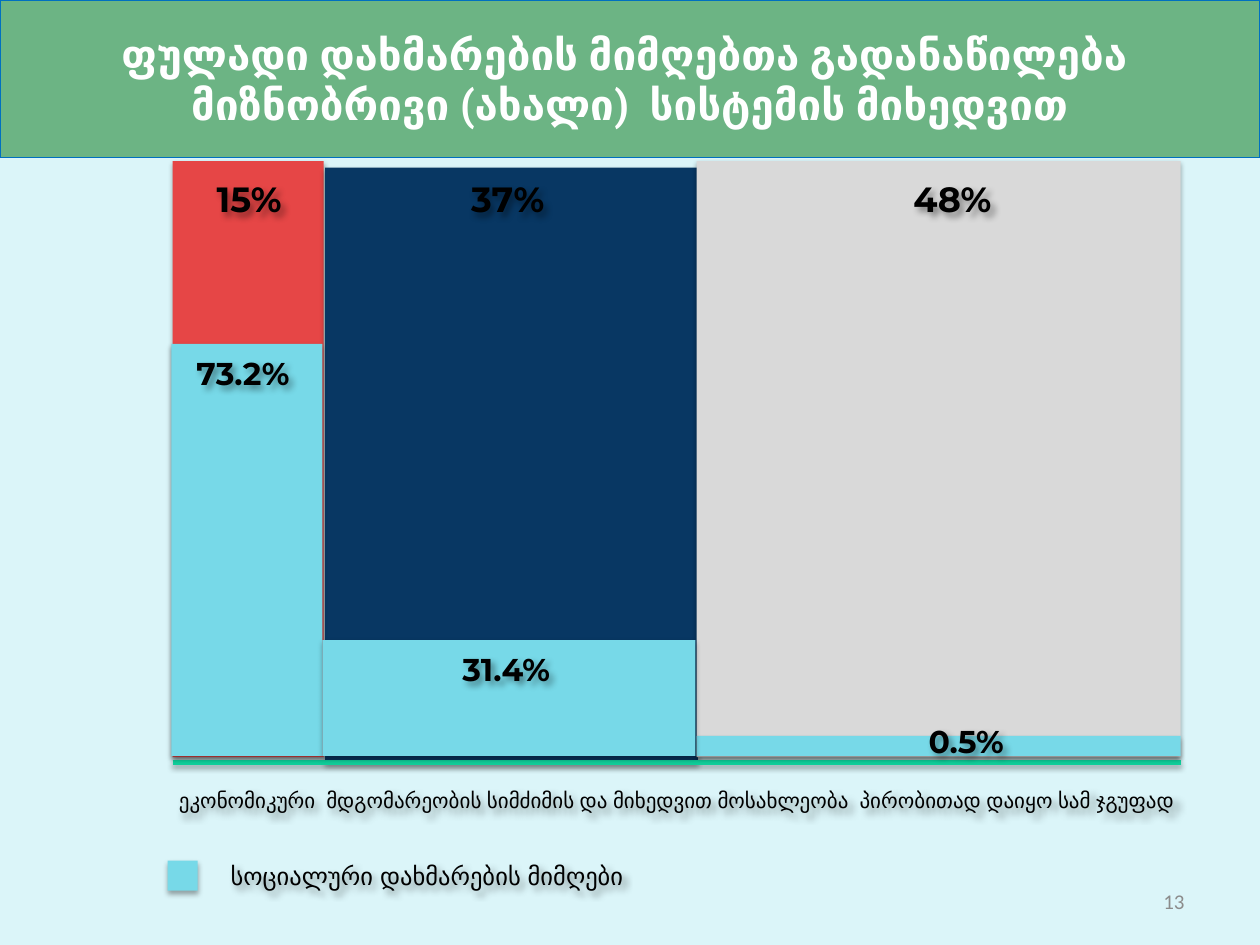
"""Build a slide of benefit recipients split into three population groups."""
from lxml import etree
from pptx import Presentation, util as u
from pptx.dml.color import RGBColor
from pptx.enum import shapes, text
from pptx.oxml.ns import qn

rgb = RGBColor.from_string


def write(sp, content, font="Montserrat", size=18, color="000000", bold=False,
          align=None, anchor=text.MSO_ANCHOR.TOP, wrap=False, inset=0):
    tf = sp.text_frame
    tf.word_wrap = wrap
    tf.auto_size = text.MSO_AUTO_SIZE.NONE
    tf.vertical_anchor = anchor
    tf.margin_left = tf.margin_right = u.Inches(inset)
    tf.margin_top = tf.margin_bottom = u.Inches(inset / 2)
    p = tf.paragraphs[0]
    p.alignment = align
    r = p.add_run()
    r.text = content
    r.font.name, r.font.size, r.font.bold = font, u.Pt(size), bold
    r.font.color.rgb = rgb(color)


def add_shadow(sp, blur, dist, angle, alpha):
    effects = etree.SubElement(sp._element.spPr, qn("a:effectLst"))
    shadow = etree.SubElement(effects, qn("a:outerShdw"), blurRad=str(u.Pt(blur)),
                              dist=str(u.Pt(dist)), dir=str(angle * 60000), rotWithShape="0")
    black = etree.SubElement(shadow, qn("a:srgbClr"), val="000000")
    etree.SubElement(black, qn("a:alpha"), val=str(alpha * 1000))


prs = Presentation()
prs.slide_width, prs.slide_height = u.Inches(10), u.Inches(7.5)
s = prs.slides.add_slide(prs.slide_layouts[5])
s.background.fill.solid()
s.background.fill.fore_color.rgb = rgb("DBF5F9")

title = s.shapes.title
title.left, title.top, title.width, title.height = [u.Inches(v) for v in (0, 0, 10, 1.25)]
geom = etree.SubElement(title._element.spPr, qn("a:prstGeom"), prst="roundRect")
adjust = etree.SubElement(geom, qn("a:avLst"))
etree.SubElement(adjust, qn("a:gd"), name="adj", fmla="val 16667")
title.fill.solid()
title.fill.fore_color.rgb = rgb("6CB484")
title.line.color.rgb = rgb("0070C0")
title.line.width = u.Pt(0.75)
write(title, "ფულადი დახმარების მიმღებთა გადანაწილება  მიზნობრივი (ახალი)  სისტემის მიხედვით",
      font="Roboto", size=24, color="FFFFFF", bold=True, wrap=True, inset=0.1,
      align=text.PP_ALIGN.CENTER, anchor=text.MSO_ANCHOR.MIDDLE)

recipient = "77D9E8"
groups = [(1.37, 1.28, 1.2, 4.73, "E64646"), (2.58, 1.33, 2.96, 4.73, "083763"),
          (5.53, 1.28, 3.84, 4.73, "D9D9D9")]
shares = [(5.53, 5.84, 3.84, 0.16, recipient), (1.36, 2.73, 1.2, 3.27, recipient),
          (2.56, 5.08, 2.96, 0.92, recipient)]
legend_key = (1.33, 6.83, 0.24, 0.24, recipient)

axis = s.shapes.add_connector(shapes.MSO_CONNECTOR.STRAIGHT, u.Inches(1.37), u.Inches(6.05),
                              u.Inches(9.37), u.Inches(6.05))
axis.line.color.rgb = rgb("10CF9B")
axis.line.width = u.Pt(3)
add_shadow(axis, 3.1, 1.8, 90, 35)

for *box, color in groups + shares + [legend_key]:
    sp = s.shapes.add_shape(shapes.MSO_SHAPE.RECTANGLE, *[u.Inches(v) for v in box])
    sp.fill.solid()
    sp.fill.fore_color.rgb = rgb(color)
    sp.line.fill.background()
    add_shadow(sp, 3.1, 1.8, 90, 35)
s.shapes._spTree.remove(axis._element)
s.shapes._spTree.insert(s.shapes._spTree.index(s.shapes[3]._element) + 1, axis._element)

labels = [
    (1.72, 1.41, 0.66, 0.34, "15%", dict(size=20, bold=True)),
    (3.74, 1.41, 0.66, 0.34, "37%", dict(size=20, bold=True)),
    (7.25, 1.41, 0.66, 0.34, "48%", dict(size=20, bold=True)),
    (1.56, 2.81, 0.84, 0.3, "73.2%", dict(bold=True)),
    (3.67, 5.16, 0.84, 0.3, "31.4%", dict(bold=True)),
    (7.37, 5.73, 0.67, 0.3, "0.5%", dict(bold=True)),
    (1.83, 6.83, 6.22, 0.24, "სოციალური დახმარების მიმღები",
     dict(font="Arial", size=14, wrap=True)),
    (1.42, 6.25, 7.97, 0.2,
     "ეკონომიკური  მდგომარეობის სიმძიმის და მიხედვით მოსახლეობა  პირობითად დაიყო სამ ჯგუფად",
     dict(size=12, wrap=True)),
]
for *box, content, style in labels:
    sp = s.shapes.add_textbox(*[u.Inches(v) for v in box])
    write(sp, content, **style)
    add_shadow(sp, 4, 3, 45, 40)

number = s.shapes.add_textbox(u.Inches(7.17), u.Inches(6.95), u.Inches(2.33), u.Inches(0.4))
write(number, "13", font="Calibri", size=12, color="8C8C8C", wrap=True, inset=0.1,
      align=text.PP_ALIGN.RIGHT, anchor=text.MSO_ANCHOR.MIDDLE)

prs.save("out.pptx")
